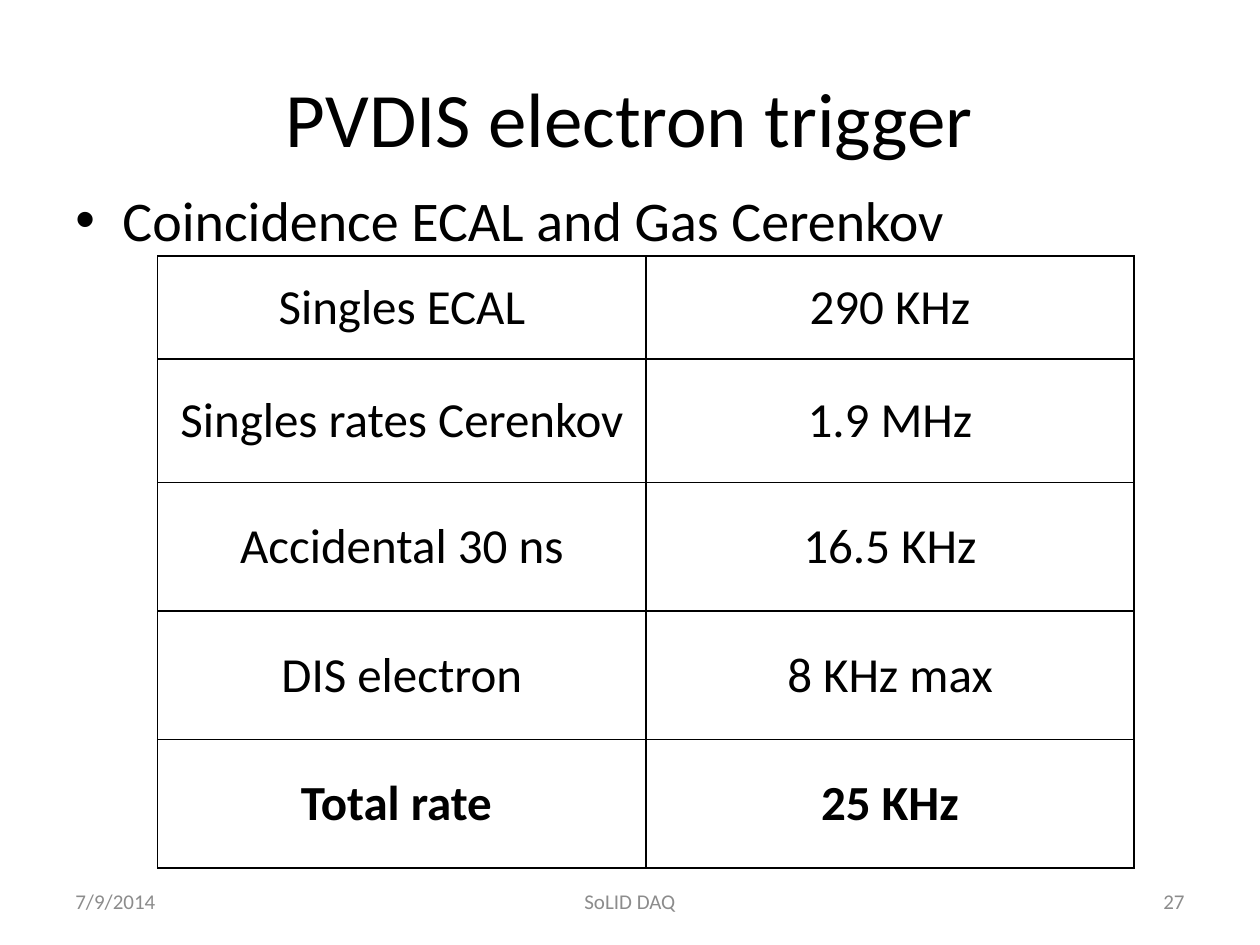
from lxml.etree import SubElement
from pptx import Presentation
from pptx.dml.color import RGBColor
from pptx.enum.text import MSO_ANCHOR, PP_ALIGN
from pptx.oxml.ns import qn
from pptx.util import Cm, Pt

BLACK = RGBColor(0x00, 0x00, 0x00)
GRAY = RGBColor(0x8C, 0x8C, 0x8C)

RATES = [
    ("Singles ECAL", "290 KHz"),
    ("Singles rates Cerenkov", "1.9 MHz"),
    ("Accidental 30 ns", "16.5 KHz"),
    ("DIS electron", "8 KHz max"),
    ("Total rate ", "25 KHz"),
]
ROW_HEIGHTS = [2.08, 2.49, 2.59, 2.59, 2.59]


class SlideBuilder:
    font_name = "Calibri"

    def __init__(self, page):
        self.page = page

    def fill_para(self, para, text, size, color=BLACK, align=PP_ALIGN.LEFT, bold=False):
        para.add_run().text = text
        para.alignment = align
        font = para.font
        font.name, font.size, font.bold = self.font_name, Pt(size), bold
        font.color.rgb = color

    def text(self, text, left, top, width, height, size, color=BLACK,
             align=PP_ALIGN.LEFT, anchor=MSO_ANCHOR.MIDDLE):
        box = self.page.shapes.add_textbox(Cm(left), Cm(top), Cm(width), Cm(height))
        frame = box.text_frame
        frame.word_wrap = True
        frame.vertical_anchor = anchor
        self.fill_para(frame.paragraphs[0], text, size, color, align)
        return frame.paragraphs[0]

    def bullet(self, text, left, top, width, height, size):
        para = self.text(text, left, top, width, height, size, anchor=MSO_ANCHOR.TOP)
        properties = para._p.get_or_add_pPr()
        indent = Cm(0.95)
        properties.set("marL", str(indent))
        properties.set("indent", str(-indent))
        mark = SubElement(properties, qn("a:buChar"), char="•")
        typeface = SubElement(properties, qn("a:buFont"), typeface="Arial")
        properties.insert(0, typeface)
        properties.insert(1, mark)

    def border(self, cell):
        properties = cell._tc.get_or_add_tcPr()
        for position, side in enumerate(("a:lnL", "a:lnR", "a:lnT", "a:lnB")):
            line = SubElement(properties, qn(side), w=str(Pt(1)))
            fill = SubElement(line, qn("a:solidFill"))
            SubElement(fill, qn("a:srgbClr"), val=str(BLACK))
            properties.insert(position, line)

    def table(self, rows, left, top, column_width, row_heights, size):
        columns = len(rows[0])
        table = self.page.shapes.add_table(
            len(rows), columns, Cm(left), Cm(top),
            Cm(column_width * columns), Cm(sum(row_heights))).table
        table.first_row = table.horz_banding = False
        for column in table.columns:
            column.width = Cm(column_width)
        for row, height, values in zip(table.rows, row_heights, rows):
            row.height = Cm(height)
            for cell, value in zip(row.cells, values):
                cell.fill.background()
                cell.vertical_anchor = MSO_ANCHOR.MIDDLE
                self.fill_para(cell.text_frame.paragraphs[0], value, size,
                               align=PP_ALIGN.CENTER, bold=values is rows[-1])
                self.border(cell)


def main():
    deck = Presentation()
    deck.slide_width, deck.slide_height = Cm(25.4), Cm(19.05)
    builder = SlideBuilder(deck.slides.add_slide(deck.slide_layouts[6]))

    # Title and bullet
    builder.text("PVDIS electron trigger", 1.27, 0.76, 22.86, 3.18, 44,
                 align=PP_ALIGN.CENTER)
    builder.bullet("Coincidence ECAL and Gas Cerenkov", 1.27, 3.61, 22.86, 12.57, 32)

    # Footer
    for text, left, width, align in (
        ("7/9/2014", 1.27, 5.92, PP_ALIGN.LEFT),
        ("SoLID DAQ", 8.68, 8.04, PP_ALIGN.CENTER),
        ("27", 18.21, 5.92, PP_ALIGN.RIGHT),
    ):
        builder.text(text, left, 17.65, width, 1.02, 12, GRAY, align)

    # Trigger rates
    builder.table(RATES, 3.18, 5.16, 9.84, ROW_HEIGHTS, 28)

    deck.save("out.pptx")


if __name__ == "__main__":
    main()
